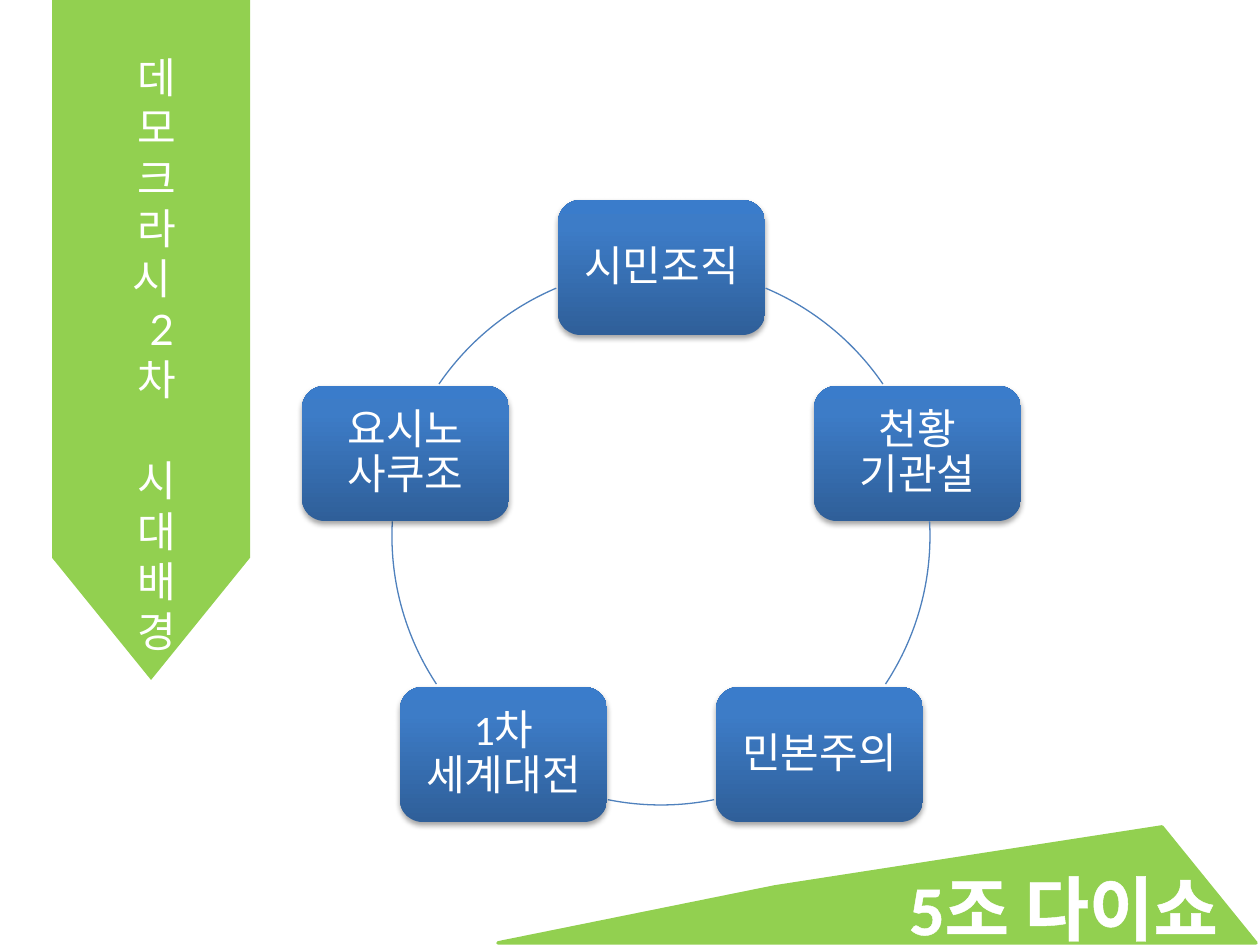
from math import cos, radians, sin

from pptx import Presentation
from pptx.dml.color import RGBColor
from pptx.enum.shapes import MSO_SHAPE as Preset
from pptx.enum.text import MSO_ANCHOR as Anchor, MSO_AUTO_SIZE as AutoSize, PP_ALIGN as Align
from pptx.oxml import parse_xml
from pptx.util import Pt

PX = 914400 // 126
GREEN = RGBColor(0x92, 0xD0, 0x50)
WHITE = RGBColor(0xFF, 0xFF, 0xFF)
BLACK = RGBColor(0x00, 0x00, 0x00)
RING_BLUE = RGBColor(0x4F, 0x81, 0xBD)
NODE_STOPS = [
    (0, RGBColor(0x2F, 0x5F, 0x99)),
    (80, RGBColor(0x3D, 0x7C, 0xC7)),
    (100, RGBColor(0x3A, 0x7C, 0xCB)),
]
NS = 'xmlns:a="http://schemas.openxmlformats.org/drawingml/2006/main"'


class SlideBuilder:
    body_font = "Calibri"
    label_size = 24

    def __init__(self, slide):
        self.shapes = slide.shapes

    def preset(self, kind, left, top, width, height):
        shape = self.shapes.add_shape(kind, left * PX, top * PX, width * PX, height * PX)
        shape.shadow.inherit = False
        return shape

    def add_label(self, paragraph, text, font=None, size=None, bold=False):
        paragraph.alignment = Align.CENTER
        run = paragraph.add_run()
        run.text = text
        run.font.name = font or self.body_font
        run.font.size = Pt(size or self.label_size)
        run.font.bold = bold
        run.font.color.rgb = WHITE
        return run

    def text_frame(self, left, top, width, height):
        box = self.shapes.add_textbox(left * PX, top * PX, width * PX, height * PX)
        box.text_frame.word_wrap = True
        box.text_frame.auto_size = AutoSize.SHAPE_TO_FIT_TEXT
        return box.text_frame

    def ribbon(self, left, width, length, point):
        arrow = self.preset(Preset.PENTAGON, left + (width - length) // 2,
                            (length - width) // 2, length, width)
        arrow.rotation = 90
        arrow.adjustments[0] = point
        arrow.fill.solid()
        arrow.fill.fore_color.rgb = GREEN
        arrow.line.fill.background()

    def polygon(self, points):
        builder = self.shapes.build_freeform(*points[0], scale=PX)
        builder.add_line_segments(points[1:], close=True)
        outline = builder.convert_to_shape()
        outline.shadow.inherit = False
        outline.fill.solid()
        outline.fill.fore_color.rgb = GREEN
        outline.line.color.rgb = GREEN
        outline.line.width = Pt(2)

    def column(self, left, top, width, height, lines):
        frame = self.text_frame(left, top, width, height)
        for index, (text, gap) in enumerate(lines):
            paragraph = frame.add_paragraph() if index else frame.paragraphs[0]
            paragraph.space_before = Pt(gap)
            self.add_label(paragraph, text, font="Lato")

    def banner(self, left, top, width, height, text):
        frame = self.text_frame(left, top, width, height)
        run = self.add_label(frame.paragraphs[0], text, size=40, bold=True)
        run._r.get_or_add_rPr().insert(0, parse_xml(
            f'<a:ln {NS} w="{Pt(1.45)}"><a:solidFill><a:srgbClr val="{WHITE}"/></a:solidFill></a:ln>'))

    def arc(self, center_x, center_y, radius, start, end):
        arc = self.preset(Preset.ARC, center_x - radius, center_y - radius, 2 * radius, 2 * radius)
        for index, angle in enumerate((start, end)):
            arc.adjustments[index] = angle % 360 * 0.6
        arc.fill.background()
        arc.line.color.rgb = RING_BLUE
        arc.line.width = Pt(0.75)

    def node(self, center_x, center_y, width, height, text):
        node = self.preset(Preset.ROUNDED_RECTANGLE, center_x - width // 2,
                           center_y - height // 2, width, height)
        stops = "".join(f'<a:gs pos="{position * 1000}"><a:srgbClr val="{color}"/></a:gs>'
                        for position, color in NODE_STOPS)
        effects = node._element.spPr[-1]
        effects.addprevious(parse_xml(
            f'<a:gradFill {NS} rotWithShape="1"><a:gsLst>{stops}</a:gsLst>'
            f'<a:lin ang="{270 * 60000}" scaled="0"/></a:gradFill>'))
        effects.append(parse_xml(
            f'<a:outerShdw {NS} blurRad="{Pt(3.1)}" dist="{Pt(1.8)}" dir="{90 * 60000}" rotWithShape="0">'
            f'<a:srgbClr val="{BLACK}"><a:alpha val="35000"/></a:srgbClr></a:outerShdw>'))
        node.line.fill.background()
        frame = node.text_frame
        frame.word_wrap = True
        frame.vertical_anchor = Anchor.MIDDLE
        frame.margin_left = frame.margin_right = 6 * PX
        frame.margin_top = frame.margin_bottom = 6 * PX
        frame.paragraphs[0].line_spacing = 0.9
        self.add_label(frame.paragraphs[0], text)


def main():
    deck = Presentation()
    deck.slide_width, deck.slide_height = 1260 * PX, 945 * PX
    page = SlideBuilder(deck.slides.add_slide(deck.slide_layouts[6]))

    page.polygon([(775, 887), (1162, 827), (1256, 943), (498, 943)])
    page.banner(870, 859, 387, 97, "5조 다이쇼")
    page.ribbon(52, 198, 680, 0.617)

    center_x, center_y, radius = 661, 536, 269
    factors = ["시민조직", "천황 기관설", "민본주의", "1차 세계대전", "요시노 사쿠조"]
    arcs = [(-67.1, -34.4), (-3.1, 33.4), (78.6, 101.4), (146.6, 183.1), (214.4, 247.1)]
    for index, (factor, (start, end)) in enumerate(zip(factors, arcs)):
        angle = radians(index * 360 / len(factors) - 90)
        page.node(center_x + round(radius * cos(angle)),
                  center_y + round(radius * sin(angle)), 207, 135, factor)
        page.arc(center_x, center_y, radius, start, end)

    page.column(117, 45, 79, 662, [("데모크라시 ", 0), (" 2", 0), ("차", 0), ("시대배경", 29)])
    deck.save("out.pptx")


if __name__ == "__main__":
    main()
